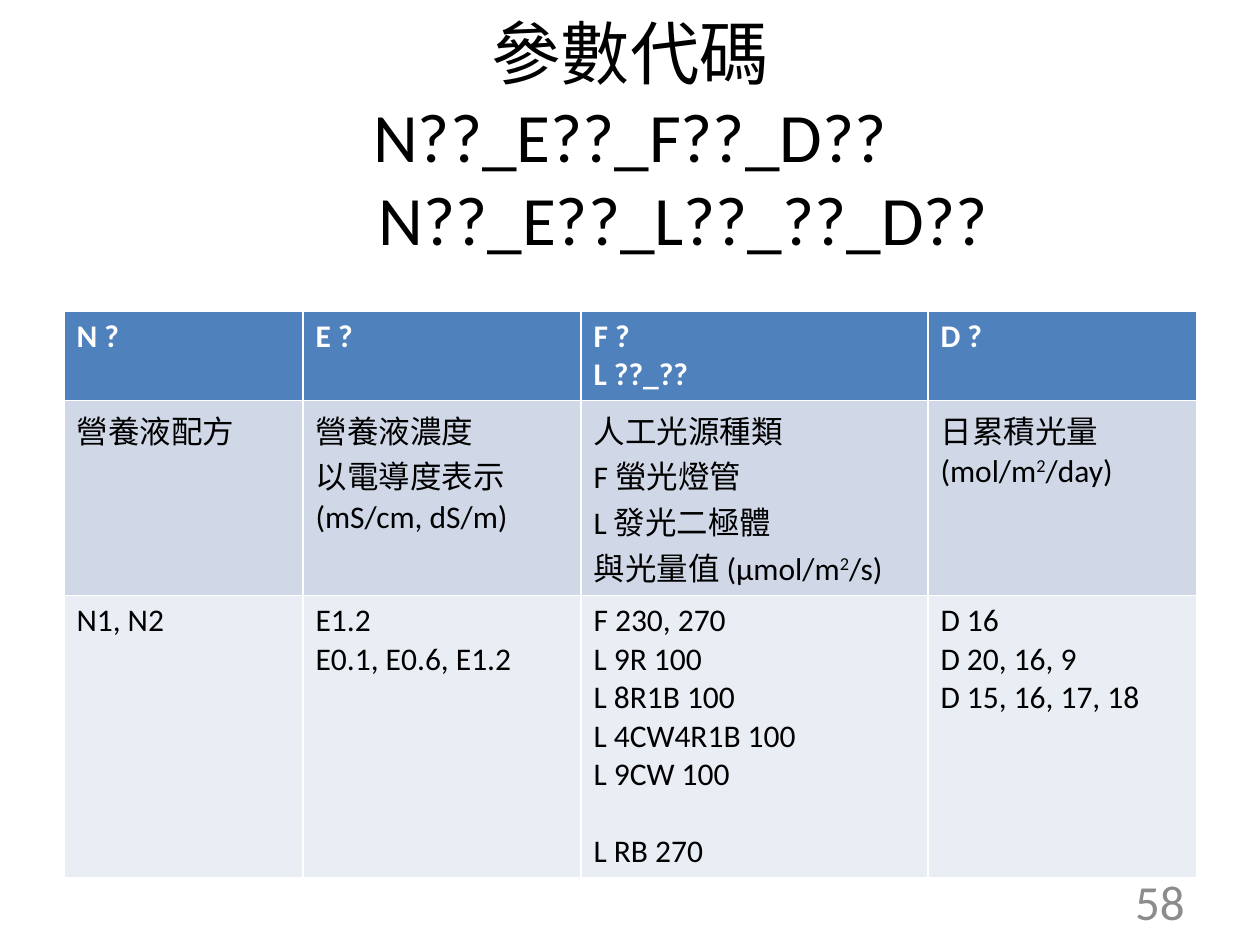
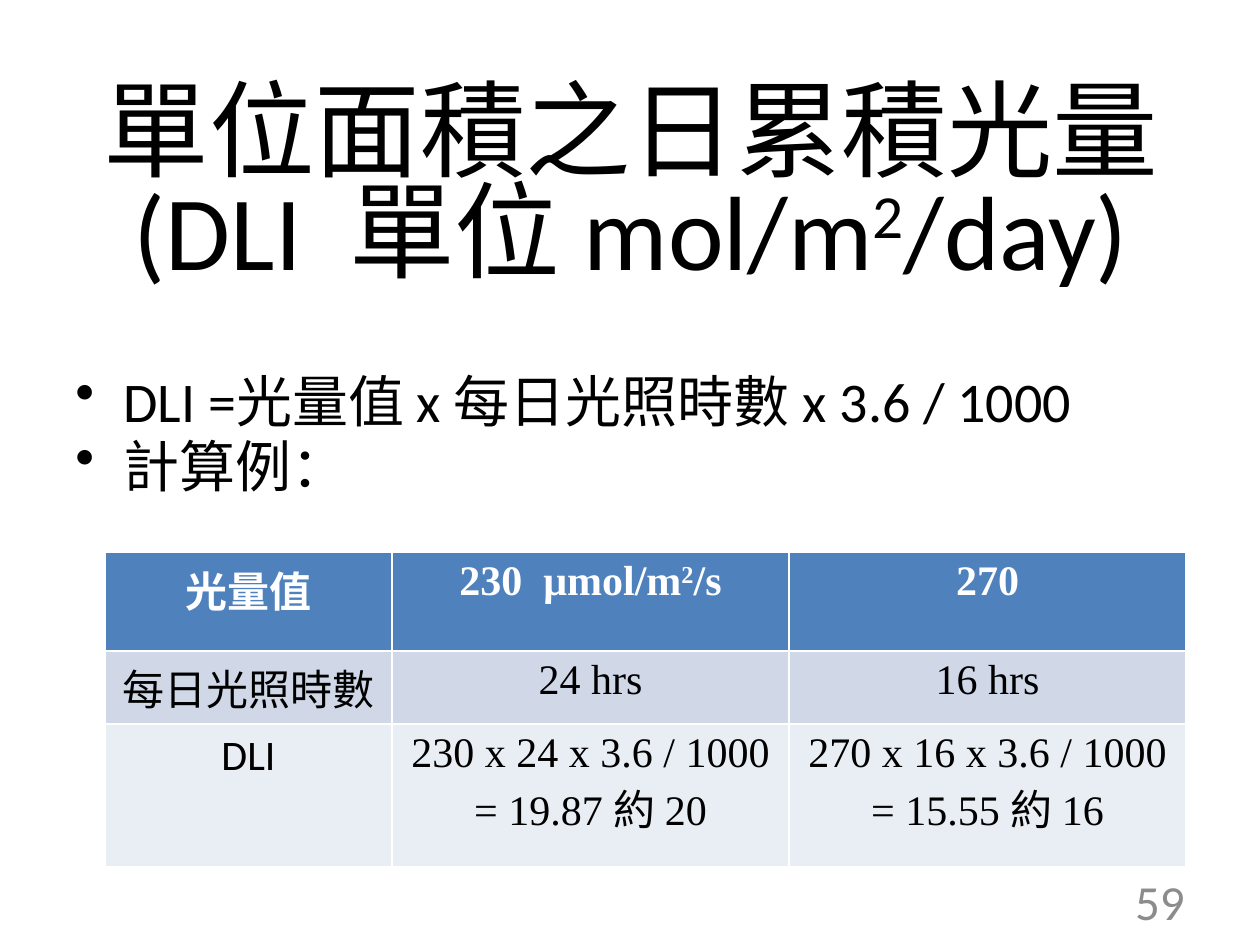
from pptx import Presentation
from pptx.dml.color import RGBColor
from pptx.enum.text import MSO_ANCHOR, MSO_AUTO_SIZE, PP_ALIGN
from pptx.util import Emu, Pt
from lxml.etree import SubElement
from pptx.oxml.ns import qn

BLACK, WHITE, GREY = "000000", "FFFFFF", "8C8C8C"
BANDS = ["4F81BD", "D0D8E8", "E9EDF4"]
SANS, SERIF = "Calibri", "Times New Roman"
LEFT, MID, RIGHT = PP_ALIGN.LEFT, PP_ALIGN.CENTER, PP_ALIGN.RIGHT


def px(n):
    return Emu(round(n * 914400 / 126))


def rgb(code):
    return RGBColor.from_string(code)


class Deck:
    """Holds the shared style and the current slide."""

    def __init__(self):
        self.prs = Presentation()
        self.prs.slide_width, self.prs.slide_height = px(1260), px(945)
        self.slide = None

    def fill(self, frame, lines, size, color=BLACK, align=LEFT, face=SANS, bold=False):
        frame.word_wrap = True
        for i, line in enumerate(lines):
            para = frame.paragraphs[0] if i == 0 else frame.add_paragraph()
            para.alignment = align
            font = para.font
            font.name, font.size, font.bold = face, Pt(size), bold
            font.color.rgb = rgb(color)
            for j, part in enumerate(line.split("^")):
                if j:
                    power = para.add_run()
                    power.text = part[0]
                    power._r.get_or_add_rPr().set("baseline", "30000")
                    part = part[1:]
                para.add_run().text = part
        return frame.paragraphs

    def start(self, box, lines, size):
        self.slide = self.prs.slides.add_slide(self.prs.slide_layouts[5])
        title = self.slide.shapes.title
        title.left, title.top, title.width, title.height = map(px, box)
        frame = title.text_frame
        frame.auto_size = MSO_AUTO_SIZE.NONE
        frame.vertical_anchor = MSO_ANCHOR.MIDDLE
        return self.fill(frame, lines, size, align=MID)

    def text(self, box, lines, size, **look):
        frame = self.slide.shapes.add_textbox(*map(px, box)).text_frame
        return self.fill(frame, lines, size, **look)

    def list(self, box, lines, size):
        for para in self.text(box, lines, size):
            para.space_before, para.line_spacing = Pt(size / 5), 0.8
            props = para._p.get_or_add_pPr()
            props.set("marL", str(px(48)))
            props.set("indent", str(px(-48)))
            mark = SubElement(props, qn("a:buChar"))
            mark.set("char", "•")
            props.insert_element_before(mark, "a:tabLst", "a:defRPr")

    def table(self, left, top, cols, rows, data, size, align=LEFT, face=SANS):
        box = map(px, (left, top, sum(cols), sum(rows)))
        table = self.slide.shapes.add_table(len(rows), len(cols), *box).table
        for col, width in zip(table.columns, cols):
            col.width = px(width)
        for r, (row, cells) in enumerate(zip(table.rows, data)):
            row.height = px(rows[r])
            for c, value in enumerate(cells):
                cell = table.cell(r, c)
                cell.fill.solid()
                cell.fill.fore_color.rgb = rgb(BANDS[r])
                self.fill(cell.text_frame, value.split("\n"), size,
                          BLACK if r else WHITE, align, face if c else SANS, r == 0)
        return table

    def number(self, n):
        self.text((903, 876, 294, 50), [str(n)], 28, color=GREY, align=RIGHT)
        self.slide.shapes[-1].text_frame.vertical_anchor = MSO_ANCHOR.MIDDLE


def codes(deck):
    title = ["參數代碼", "N??_E??_F??_D??", "N??_E??_L??_??_D??"]
    paras = deck.start((64, 45, 1132, 179), title, 39.6)
    paras[2]._p.get_or_add_pPr().set("marL", str(px(107)))
    data = [
        ["N ?", "E ?", "F ?\nL ??_??", "D ?"],
        ["營養液配方", "營養液濃度\n以電導度表示\n(mS/cm, dS/m)",
         "人工光源種類\nF 螢光燈管\nL 發光二極體\n與光量值 (μmol/m^2/s)",
         "日累積光量\n(mol/m^2/day)"],
        ["N1, N2", "E1.2\nE0.1, E0.6, E1.2",
         "F 230, 270\nL 9R 100\nL 8R1B 100\nL 4CW4R1B 100\nL 9CW 100\nL RB 270",
         "D 16\nD 20, 16, 9\nD 15, 16, 17, 18"],
    ]
    table = deck.table(64, 311, [239, 278, 347, 269], [88, 195, 282], data, 18)
    table.cell(2, 2).text_frame.paragraphs[-1].space_before = Pt(22)
    deck.number(58)


def light(deck):
    title = ["單位面積之日累積光量", "(DLI  單位 mol/m^2/day)"]
    for para in deck.start((64, 76, 1134, 227), title, 60.3):
        para.line_spacing = 0.8
    rules = ["DLI =光量值 x 每日光照時數 x 3.6 / 1000", "計算例："]
    deck.list((63, 373, 1134, 159), rules, 32)
    data = [
        ["光量值", "230  μmol/m^2/s", "270"],
        ["每日光照時數", "24 hrs", "16 hrs"],
        ["DLI", "230 x 24 x 3.6 / 1000\n= 19.87 約 20",
         "270 x 16 x 3.6 / 1000\n= 15.55 約 16"],
    ]
    deck.table(105, 552, [287, 397, 397], [99, 73, 143], data, 24, MID, SERIF)
    deck.number(59)


def main():
    deck = Deck()
    codes(deck)
    light(deck)
    deck.prs.save("out.pptx")


if __name__ == "__main__":
    main()
